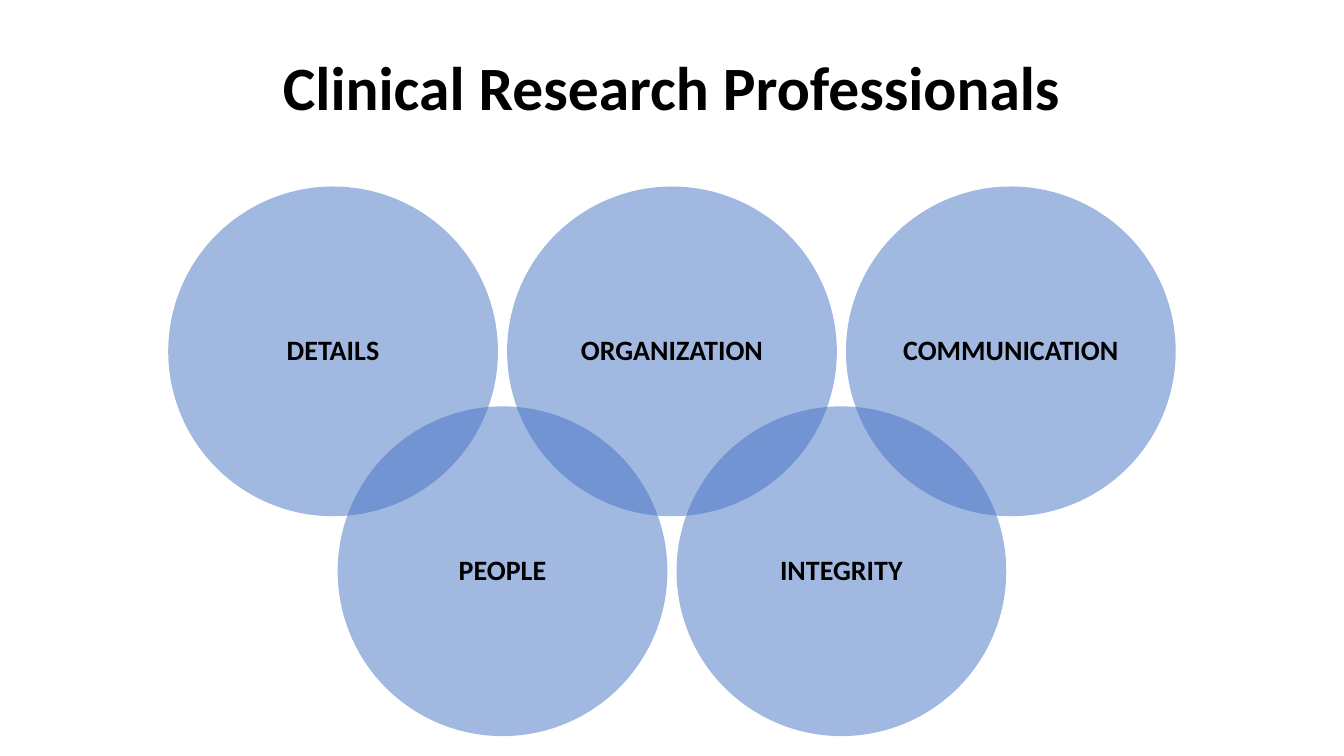
from lxml.etree import SubElement
from pptx import Presentation
from pptx.dml.color import RGBColor
from pptx.enum.shapes import MSO_SHAPE
from pptx.enum.text import MSO_ANCHOR, PP_ALIGN
from pptx.oxml.ns import qn
from pptx.util import Cm, Pt

BLUE = "4472C4"
BLACK = "000000"
QUALITIES = ["DETAILS", "PEOPLE", "ORGANIZATION", "INTEGRITY", "COMMUNICATION"]
DIAMETER = 8.31
FIRST_LEFT = 4.24
STEP = 4.27
ROW_TOPS = [4.7, 10.24]


def color(hex_string):
    return RGBColor.from_string(hex_string)


def write_text(text_frame, text, size):
    text_frame.vertical_anchor = MSO_ANCHOR.MIDDLE
    paragraph = text_frame.paragraphs[0]
    paragraph.text = text
    paragraph.alignment = PP_ALIGN.CENTER
    paragraph.line_spacing = 0.9
    paragraph.font.name = "Calibri"
    paragraph.font.size = Pt(size)
    paragraph.font.bold = True
    paragraph.font.color.rgb = color(BLACK)


def set_opacity(shape, percent):
    fill_color = shape.fill._xPr.find(qn("a:solidFill"))[0]
    SubElement(fill_color, qn("a:alpha")).set("val", str(percent * 1000))


def add_title(slide, text):
    title = slide.shapes.add_textbox(Cm(2.33), Cm(0.51), Cm(29.21), Cm(3.55))
    title.text_frame.word_wrap = True
    write_text(title.text_frame, text, 44)


def add_circle(slide, text, left, top):
    circle = slide.shapes.add_shape(
        MSO_SHAPE.OVAL, Cm(left), Cm(top), Cm(DIAMETER), Cm(DIAMETER)
    )
    circle.shadow.inherit = False
    circle.fill.solid()
    circle.fill.fore_color.rgb = color(BLUE)
    set_opacity(circle, 50)
    circle.line.fill.background()
    text_frame = circle.text_frame
    text_frame.word_wrap = False
    text_frame.margin_left = text_frame.margin_right = Cm(0.2)
    text_frame.margin_top = text_frame.margin_bottom = Cm(0.2)
    write_text(text_frame, text, 20)


def main():
    presentation = Presentation()
    presentation.slide_width = Cm(33.87)
    presentation.slide_height = Cm(19.05)
    slide = presentation.slides.add_slide(presentation.slide_layouts[6])
    add_title(slide, "Clinical Research Professionals")
    for index, quality in enumerate(QUALITIES):
        add_circle(slide, quality, FIRST_LEFT + index * STEP, ROW_TOPS[index % 2])
    presentation.save("out.pptx")


if __name__ == "__main__":
    main()
